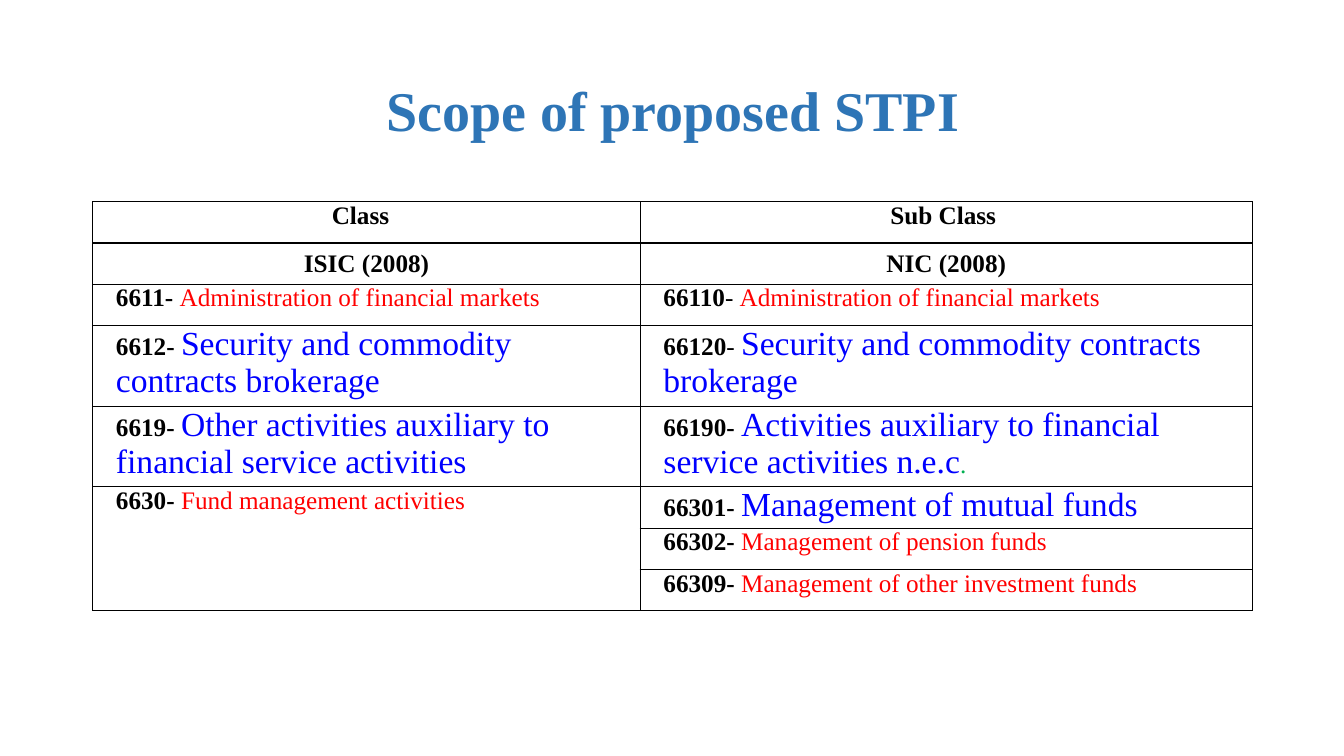
from pptx import Presentation
from pptx.dml.color import RGBColor
from pptx.enum.text import MSO_ANCHOR as Anchor, PP_ALIGN as Align
from pptx.oxml import parse_xml
from pptx.oxml.ns import nsdecls
from pptx.util import Inches, Pt

FONT = "Times New Roman"
BLACK, RED, BLUE, GREEN = "000000", "FF0000", "0000FF", "00B050"

# Header cells: text and right inset
HEADS = [
    [("Class", 0.12), ("Sub Class", 0.06)],
    [("ISIC (2008)", 0), ("NIC (2008)", 0)],
]


def code(text):
    return text, 18, BLACK, True


def plain(text, color=RED):
    return text, 18, color, False


def large(text):
    return text, 24, BLUE, False


MARKETS = "Administration of financial markets"
BROKERS = "Security and commodity contracts brokerage"
ROWS = [
    ([code("6611- "), plain(MARKETS)],
     [code("66110"), plain("- ", BLACK), plain(MARKETS)]),
    ([code("6612- "), large(BROKERS)],
     [code("66120"), plain("- ", BLACK), large(BROKERS)]),
    ([code("6619- "),
      large("Other activities auxiliary to financial service activities")],
     [code("66190- "),
      large("Activities auxiliary to financial service activities n.e.c"),
      plain(".", GREEN)]),
    ([code("6630- "), plain("Fund management activities")],
     [code("66301- "), large("Management of mutual funds")]),
    (None, [code("66302- "), plain("Management of pension funds")]),
    (None, [code("66309- "), plain("Management of other investment funds")]),
]


def rgb(color):
    return RGBColor.from_string(color)


def write(para, parts):
    """Add one run for each (text, size, color, bold) part."""
    for text, size, color, bold in parts:
        run = para.add_run()
        run.text = text
        font = run.font
        font.name, font.size, font.bold = FONT, Pt(size), bold
        font.color.rgb = rgb(color)


def add_title(slide, left, top, width, height):
    box = slide.shapes.add_textbox(
        Inches(left), Inches(top), Inches(width), Inches(height))
    frame = box.text_frame
    frame.word_wrap = True
    frame.vertical_anchor = Anchor.MIDDLE
    para = frame.paragraphs[0]
    para.alignment = Align.CENTER
    para.line_spacing = 0.9
    write(para, [("Scope of proposed STPI", 40, "2E75B6", True)])


def style(cell):
    """Give a cell a white fill, thin black borders and no insets."""
    cell.margin_left = cell.margin_right = 0
    cell.margin_top = cell.margin_bottom = 0
    props = cell._tc.get_or_add_tcPr()
    for side in ("lnL", "lnR", "lnT", "lnB"):
        props.append(parse_xml(
            f'<a:{side} {nsdecls("a")} w="{Pt(1)}"><a:solidFill>'
            f'<a:srgbClr val="{BLACK}"/></a:solidFill></a:{side}>'))
    cell.fill.solid()
    cell.fill.fore_color.rgb = rgb("FFFFFF")


def add_codes(slide, left, top, width, height):
    count = len(HEADS) + len(ROWS)
    table = slide.shapes.add_table(
        count, 2, Inches(left), Inches(top),
        Inches(width), Inches(height)).table
    table.first_row = table.horz_banding = False
    table.columns[0].width = Inches(5.43)
    table.columns[1].width = Inches(width - 5.43)
    for row in table.rows:
        row.height = Inches(0.41)
    for cell in table.iter_cells():
        style(cell)

    for r, heads in enumerate(HEADS):
        for c, (text, inset) in enumerate(heads):
            cell = table.cell(r, c)
            cell.margin_right = Inches(inset)
            cell.vertical_anchor = Anchor.MIDDLE if r else Anchor.TOP
            para = cell.text_frame.paragraphs[0]
            para.alignment = Align.CENTER
            write(para, [code(text)])

    for r, pair in enumerate(ROWS, len(HEADS)):
        for c, parts in enumerate(pair):
            if parts:
                cell = table.cell(r, c)
                cell.margin_left = Inches(0.03)
                para = cell.text_frame.paragraphs[0]
                props = para._p.get_or_add_pPr()
                props.set("marL", str(Inches(0.2)))
                props.set("indent", "0")
                write(para, parts)
    table.cell(count - 3, 0).merge(table.cell(count - 1, 0))


def main():
    deck = Presentation()
    deck.slide_width, deck.slide_height = Inches(13.33), Inches(7.5)
    slide = deck.slides.add_slide(deck.slide_layouts[6])
    add_title(slide, 0.92, 0.4, 11.5, 1.45)
    add_codes(slide, 0.92, 2, 11.5, 4.04)
    deck.save("out.pptx")


if __name__ == "__main__":
    main()
